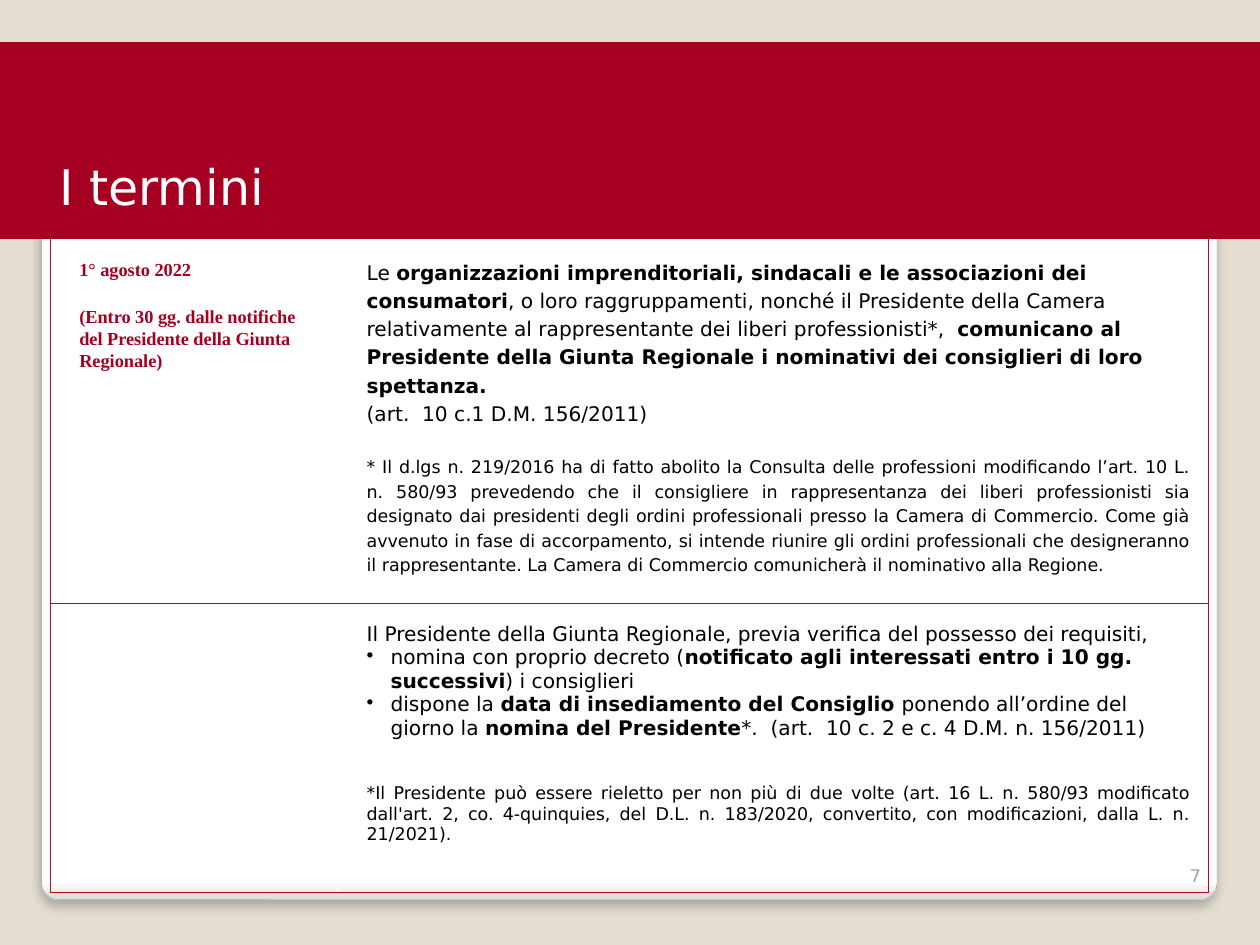
from lxml.etree import SubElement
from pptx import Presentation
from pptx.dml.color import RGBColor
from pptx.enum.shapes import MSO_SHAPE
from pptx.enum.text import MSO_ANCHOR, PP_ALIGN
from pptx.oxml import parse_xml
from pptx.oxml.ns import nsdecls, qn
from pptx.util import Inches, Pt

THEME = {
    "sand": "E3DED1", "red": "A50021", "border": "BC0B1F", "white": "FFFFFF",
    "black": "000000", "card_edge": "DADADA", "card_line": "A4A4A4", "number": "A8A49B",
    "sans": "DejaVu Sans", "serif": "Times New Roman",
    "title": 28, "body": 11.5, "date": 10.5, "note": 10,
}


def rgb(name):
    return RGBColor.from_string(THEME[name])


def write(paragraph, text, size, color="black", font="sans", bold=False, **layout):
    """Fill a paragraph; ** marks switch bold on and off, layout sets its spacing."""
    for name, value in layout.items():
        setattr(paragraph, name, value)
    for index, part in enumerate(text.split("**")):
        if part:
            run = paragraph.add_run()
            run.text = part
            look = {"size": Pt(THEME[size]), "name": THEME[font], "bold": bold or index % 2 == 1}
            for name, value in look.items():
                setattr(run.font, name, value)
            run.font.color.rgb = rgb(color)


prs = Presentation()
prs.slide_width, prs.slide_height = Inches(10), Inches(7.5)
slide = prs.slides.add_slide(prs.slide_layouts[5])
shapes = slide.shapes
slide.background.fill.solid()
slide.background.fill.fore_color.rgb = rgb("sand")

# White card
card = shapes.add_shape(MSO_SHAPE.ROUNDED_RECTANGLE, Inches(0.33), Inches(0.36), Inches(9.33), Inches(6.78))
card.adjustments[0] = 0.02
card.fill.gradient()
card.fill.gradient_angle = 270
for stop, position, color in zip(card.fill.gradient_stops, (0.98, 1), ("white", "card_edge")):
    stop.position = position
    stop.color.rgb = rgb(color)
card.line.color.rgb = rgb("card_line")
card.line.width = Pt(0.16)
card._element.spPr.append(parse_xml(
    f'<a:effectLst {nsdecls("a")}><a:outerShdw blurRad="{Pt(6)}" dist="{Pt(4)}" dir="5400000" '
    'rotWithShape="0"><a:srgbClr val="000000"><a:alpha val="25000"/></a:srgbClr>'
    '</a:outerShdw></a:effectLst>'))

# Page number
page_number = shapes.add_textbox(Inches(9.13), Inches(6.68), Inches(0.5), Inches(0.4)).text_frame
page_number.word_wrap = True
page_number.vertical_anchor = MSO_ANCHOR.BOTTOM
write(page_number.paragraphs[0], "7", "note", "number", alignment=PP_ALIGN.RIGHT)

# Deadlines: each entry is text, size and format of a paragraph
justified = {"alignment": PP_ALIGN.JUSTIFY}
date_look = {"color": "red", "font": "serif", "bold": True}
deadlines = [
    [
        [
            ("1° agosto 2022", "date", {**date_look, "line_spacing": 1.15}),
            ("(Entro 30 gg. dalle notifiche del Presidente della Giunta Regionale)", "date",
             {**date_look, "line_spacing": Pt(12.6), "space_before": Pt(14)}),
        ],
        [
            ("Le **organizzazioni imprenditoriali, sindacali e le associazioni dei consumatori**, o loro "
             "raggruppamenti, nonché il Presidente della Camera relativamente al rappresentante dei liberi "
             "professionisti*,  **comunicano al Presidente della Giunta Regionale i nominativi dei "
             "consiglieri di loro spettanza.**", "body", {"line_spacing": 1.2}),
            ("(art.  10 c.1 D.M. 156/2011)", "body", {**justified, "line_spacing": 1.2}),
            ("* Il d.lgs n. 219/2016 ha di fatto abolito la Consulta delle professioni modificando l’art. 10 "
             "L. n. 580/93 prevedendo che il consigliere in rappresentanza dei liberi professionisti sia "
             "designato dai presidenti degli ordini professionali presso la Camera di Commercio. Come già "
             "avvenuto in fase di accorpamento, si intende riunire gli ordini professionali che designeranno "
             "il rappresentante. La Camera di Commercio comunicherà il nominativo alla Regione.", "note",
             {**justified, "line_spacing": 1.2, "space_before": Pt(15.7)}),
        ],
    ],
    [
        [],
        [
            ("Il Presidente della Giunta Regionale, previa verifica del possesso dei requisiti,", "body", {}),
            ("• nomina con proprio decreto (**notificato agli interessati entro i 10 gg. successivi**) "
             "i consiglieri", "body", {}),
            ("• dispone la **data di insediamento del Consiglio **ponendo all’ordine del giorno la "
             "**nomina del Presidente***.  (art.  10 c. 2 e c. 4 D.M. n. 156/2011)", "body", {}),
            ("*Il Presidente può essere rieletto per non più di due volte (art. 16 L. n. 580/93 modificato "
             "dall'art. 2, co. 4-quinquies, del D.L. n. 183/2020, convertito, con modificazioni, dalla "
             "L. n. 21/2021).", "note", {**justified, "space_before": Pt(25)}),
        ],
    ],
]
table = shapes.add_table(2, 2, Inches(0.4), Inches(1.89), Inches(9.19), Inches(5.19)).table
table.first_row = table.horz_banding = False
for column, width in zip(table.columns, (2.28, 6.91)):
    column.width = Inches(width)
for row, height in zip(table.rows, (2.9, 2.29)):
    row.height = Inches(height)

for row_index, row in enumerate(deadlines):
    for column_index, entries in enumerate(row):
        cell = table.cell(row_index, column_index)
        for side in ("left", "right", "top", "bottom"):
            setattr(cell, f"margin_{side}", Inches(0.15))
        properties = cell._tc.get_or_add_tcPr()
        for side in ("lnL" if column_index == 0 else "lnR", "lnT", "lnB"):
            border = SubElement(properties, qn(f"a:{side}"), w=str(Pt(0.75)))
            SubElement(SubElement(border, qn("a:solidFill")), qn("a:srgbClr"), val=THEME["border"])
        cell.fill.background()
        for index, (text, size, layout) in enumerate(entries):
            frame = cell.text_frame
            paragraph = frame.add_paragraph() if index else frame.paragraphs[0]
            bulleted = text.startswith("• ")
            write(paragraph, text.removeprefix("• "), size, **layout)
            indent = paragraph._p.get_or_add_pPr()
            indent.set("marL", str(Inches(0.27 if bulleted else 0.08)))
            indent.set("indent", str(Inches(-0.19 if bulleted else 0)))
            if bulleted:
                SubElement(indent, qn("a:buChar"), char="•")

# Red band with the title in front of it
band = shapes.add_shape(MSO_SHAPE.RECTANGLE, Inches(-0.01), Inches(0.34), Inches(10.01), Inches(1.55))
band.shadow.inherit = False
band.fill.solid()
band.fill.fore_color.rgb = band.line.color.rgb = rgb("red")
band.line.width = Pt(0.75)

title = shapes.title
title.left, title.top, title.width, title.height = map(Inches, (0.37, 1.19, 9.25, 0.57))
title.text_frame.vertical_anchor = MSO_ANCHOR.MIDDLE
write(title.text_frame.paragraphs[0], "I termini", "title", "white", alignment=PP_ALIGN.LEFT)
band._element.addnext(title._element)

prs.save("out.pptx")
